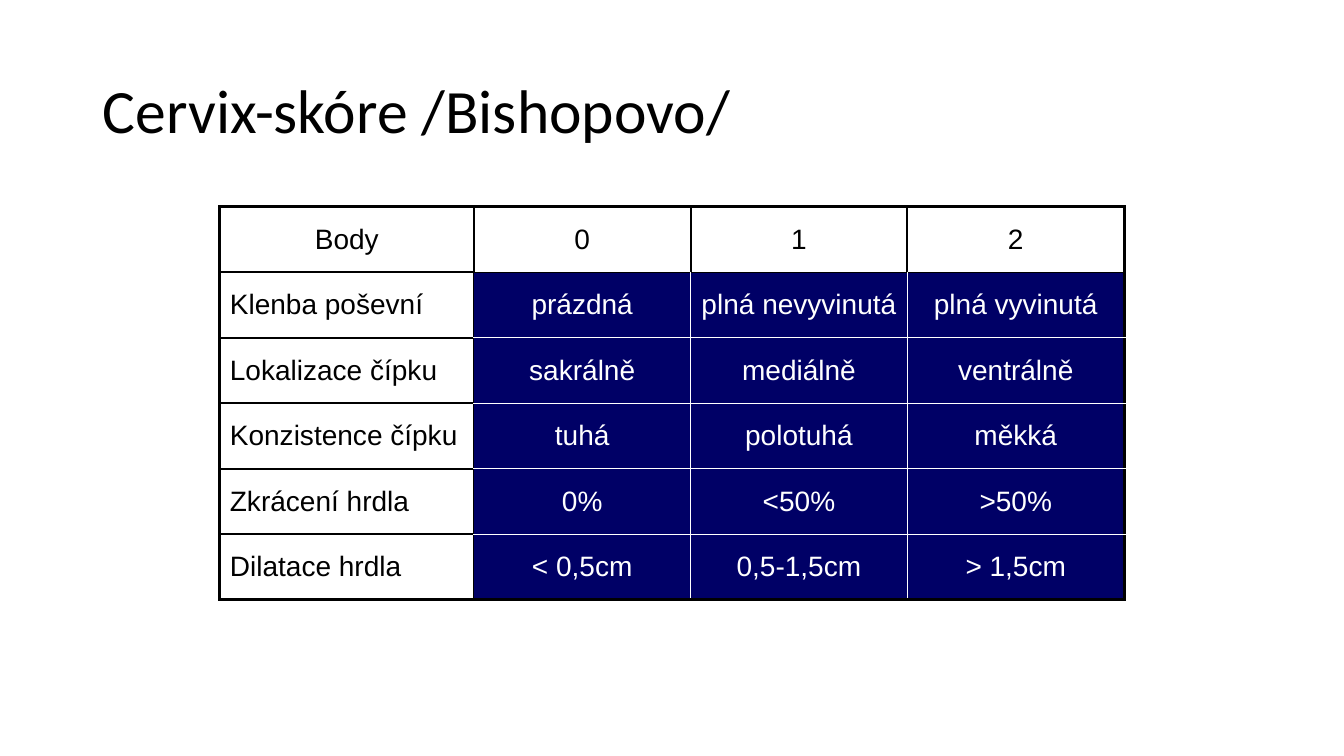
"""Build the Bishop cervix score slide."""
from lxml import etree
from pptx import Presentation
from pptx.dml.color import RGBColor
from pptx.enum.text import MSO_ANCHOR, PP_ALIGN
from pptx.oxml.ns import qn
from pptx.util import Inches, Pt

MIDDLE = MSO_ANCHOR.MIDDLE
LEFT, CENTER = PP_ALIGN.LEFT, PP_ALIGN.CENTER

TITLE = "Cervix-skóre /Bishopovo/"
ROWS = [
    ("Body", "0", "1", "2"),
    ("Klenba poševní", "prázdná", "plná nevyvinutá", "plná vyvinutá"),
    ("Lokalizace čípku", "sakrálně", "mediálně", "ventrálně"),
    ("Konzistence čípku", "tuhá", "polotuhá", "měkká"),
    ("Zkrácení hrdla", "0%", "<50%", ">50%"),
    ("Dilatace hrdla", "< 0,5cm", "0,5-1,5cm", "> 1,5cm"),
]
COL_WIDTHS = [2.52, 2.15, 2.15, 2.15]
ROW_HEIGHT = 0.65
BLACK, WHITE, NAVY = "000000", "FFFFFF", "000066"
SIDES = [("a:lnL", 0, -1), ("a:lnR", 0, 1), ("a:lnT", -1, 0), ("a:lnB", 1, 0)]


def rgb(value):
    return RGBColor.from_string(value)


def add_run(p, text, font, size, color):
    r = p.add_run()
    r.text = text
    r.font.name = font
    r.font.size = Pt(size)
    r.font.bold = False
    r.font.color.rgb = rgb(color)


def is_score(row, col):
    return row > 0 and col > 0


def border_style(row, col, next_row, next_col):
    if not (0 <= next_row < len(ROWS) and 0 <= next_col < len(COL_WIDTHS)):
        return BLACK, 2.25
    scores = is_score(row, col) + is_score(next_row, next_col)
    return [(BLACK, 1.5), (BLACK, 1), (WHITE, 1)][scores]


def set_borders(cell, row, col):
    tc_pr = cell._tc.get_or_add_tcPr()
    for i, (tag, dy, dx) in enumerate(SIDES):
        color, width = border_style(row, col, row + dy, col + dx)
        ln = etree.Element(qn(tag), w=str(Pt(width)))
        fill = etree.SubElement(ln, qn("a:solidFill"))
        etree.SubElement(fill, qn("a:srgbClr"), val=color)
        tc_pr.insert(i, ln)


def fill_cell(cell, row, col, text):
    score = is_score(row, col)
    if score:
        cell.fill.solid()
        cell.fill.fore_color.rgb = rgb(NAVY)
    else:
        cell.fill.background()
    cell.vertical_anchor = MIDDLE
    p = cell.text_frame.paragraphs[0]
    p.alignment = LEFT if row and not col else CENTER
    add_run(p, text, "Arial", 20, WHITE if score else BLACK)
    set_borders(cell, row, col)


def add_score_table(slide):
    table = slide.shapes.add_table(
        len(ROWS), len(COL_WIDTHS), Inches(2.18), Inches(2.05),
        Inches(sum(COL_WIDTHS)), Inches(ROW_HEIGHT * len(ROWS))).table
    table.first_row = False
    table.horz_banding = False
    for column, width in zip(table.columns, COL_WIDTHS):
        column.width = Inches(width)
    for row, texts in enumerate(ROWS):
        table.rows[row].height = Inches(ROW_HEIGHT)
        for col, text in enumerate(texts):
            fill_cell(table.cell(row, col), row, col, text)


def add_title(slide):
    title = slide.shapes.title
    title.left, title.top = Inches(0.92), Inches(0.4)
    title.width, title.height = Inches(11.5), Inches(1.45)
    tf = title.text_frame
    tf.vertical_anchor = MIDDLE
    p = tf.paragraphs[0]
    p.alignment = LEFT
    p.line_spacing = 0.9
    add_run(p, TITLE, "Calibri", 44, BLACK)


def main():
    prs = Presentation()
    prs.slide_width, prs.slide_height = Inches(13.33), Inches(7.5)
    slide = prs.slides.add_slide(prs.slide_layouts[5])
    add_title(slide)
    add_score_table(slide)
    prs.save("out.pptx")


if __name__ == "__main__":
    main()
